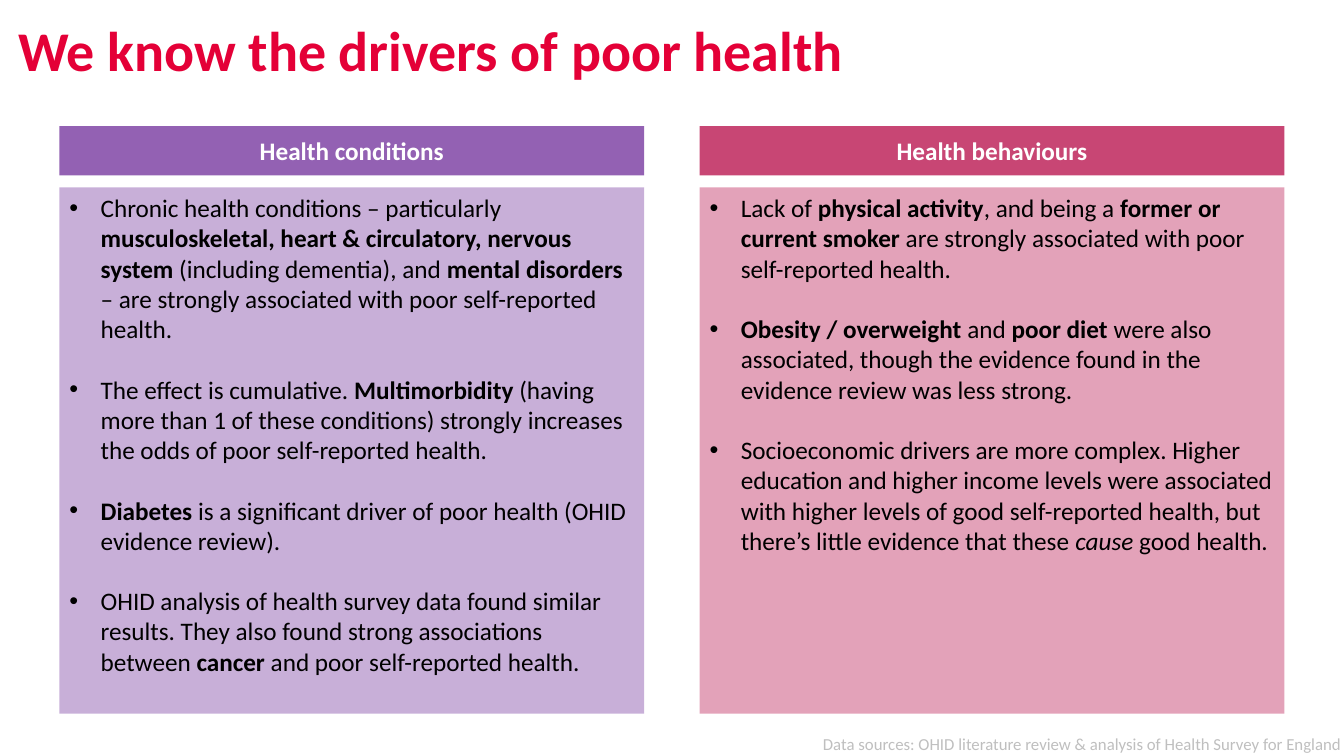
"""Build the slide on the drivers of poor health."""
from dataclasses import dataclass

from lxml import etree
from pptx import Presentation
from pptx import util as u
from pptx.dml.color import RGBColor
from pptx.enum import shapes, text
from pptx.oxml.ns import qn

WIDE, HIGH = u.Inches(13.333), u.Inches(7.5)
LEFT, STEP, SPAN = 4.43, 47.63, 43.5
FONT = "Calibri"


@dataclass
class Panel:
    """A headed column of bullet points; *bold* and _italic_ mark the text."""
    head: str
    hue: str
    points: list[str]


PANELS = [
    Panel("Health conditions", "9361B3", [
        "Chronic health conditions – particularly *musculoskeletal, heart & circulatory, "
        "nervous system *(including dementia), and *mental disorders *– are strongly "
        "associated with poor self-reported health.",
        "The effect is cumulative. *Multimorbidity* (having more than 1 of these "
        "conditions) strongly increases the odds of poor self-reported health.",
        "*Diabetes* is a significant driver of poor health (OHID evidence review).",
        "OHID analysis of health survey data found similar results. They also found "
        "strong associations between *cancer* and poor self-reported health.",
    ]),
    Panel("Health behaviours", "C84674", [
        "Lack of *physical activity*, and being a *former or current smoker* are "
        "strongly associated with poor self-reported health.",
        "*Obesity / overweight *and *poor diet *were also associated, though the "
        "evidence found in the evidence review was less strong.",
        "Socioeconomic drivers are more complex. Higher education and higher income "
        "levels were associated with higher levels of good self-reported health, but "
        "there’s little evidence that these _cause_ good health.",
    ]),
]


def tint(hue: str) -> RGBColor:
    """Turn a hex string into a colour."""
    return RGBColor.from_string(hue)


def area(x: float, y: float, w: float, h: float) -> list[int]:
    """Turn percentages of the slide into left, top, width and height."""
    return [round(p * side / 100) for p, side in zip((x, y, w, h), (WIDE, HIGH) * 2)]


def write(shape, lines: list[str], *, size: float = 18, hue: str = "000000",
          bold: bool = False, align=text.PP_ALIGN.LEFT, anchor=text.MSO_ANCHOR.TOP,
          inset: bool = True, bullet: bool = False, gap: float = 0) -> None:
    """Fill a shape with formatted paragraphs."""
    frame = shape.text_frame
    frame.word_wrap, frame.auto_size = True, text.MSO_AUTO_SIZE.NONE
    frame.vertical_anchor = anchor
    if not inset:
        frame.margin_left = frame.margin_right = frame.margin_top = frame.margin_bottom = 0
    for i, line in enumerate(lines):
        para = frame.add_paragraph() if i else frame.paragraphs[0]
        para.alignment, para.line_spacing = align, 1.0
        para.space_before = u.Pt(gap if i else 0)
        if bullet:
            props = para._p.get_or_add_pPr()
            props.set("marL", str(u.Inches(0.31)))
            props.set("indent", str(-u.Inches(0.31)))
            etree.SubElement(props, qn("a:buFont"), typeface="Arial")
            etree.SubElement(props, qn("a:buChar"), char="•")
        for j, part in enumerate(line.split("*")):
            for k, words in enumerate(part.split("_")):
                if words:
                    run = para.add_run()
                    run.text = words
                    font = run.font
                    font.name, font.size, font.color.rgb = FONT, u.Pt(size), tint(hue)
                    font.bold, font.italic = bold or j % 2 == 1, k % 2 == 1


def block(slide, box: list[int], hue: str, alpha: int = 100):
    """Draw a plain filled rectangle."""
    shape = slide.shapes.add_shape(shapes.MSO_SHAPE.RECTANGLE, *box)
    shape.shadow.inherit = False
    shape.fill.solid()
    shape.fill.fore_color.rgb = tint(hue)
    shape.line.fill.background()
    if alpha < 100:
        color = shape._element.spPr.find(f".//{qn('a:srgbClr')}")
        etree.SubElement(color, qn("a:alpha"), val=str(alpha * 1000))
    return shape


def draw(slide, panel: Panel, col: int) -> None:
    """Draw one panel in its column."""
    x = LEFT + col * STEP
    head = block(slide, area(x, 16.67, SPAN, 6.53), panel.hue)
    write(head, [panel.head], hue="FFFFFF", bold=True,
          align=text.PP_ALIGN.CENTER, anchor=text.MSO_ANCHOR.MIDDLE)
    body = block(slide, area(x, 24.8, SPAN, 69.6), panel.hue, 50)
    write(body, panel.points, bullet=True, gap=21.6)


def main() -> None:
    """Build and save the slide."""
    deck = Presentation()
    deck.slide_width, deck.slide_height = WIDE, HIGH
    slide = deck.slides.add_slide(deck.slide_layouts[5])
    title = slide.shapes.title
    title.left, title.top, title.width, title.height = area(1.35, 2, 97.58, 8.27)
    write(title, ["We know the drivers of poor health"], size=40, hue="E40037",
          bold=True, inset=False)
    for col, panel in enumerate(PANELS):
        draw(slide, panel, col)
    note = slide.shapes.add_textbox(*area(46.65, 97.07, 53.18, 2.93))
    write(note, ["Data sources: OHID literature review & analysis of Health Survey for England"],
          size=12, hue="BFBFBF", align=text.PP_ALIGN.RIGHT, inset=False)
    deck.save("out.pptx")


if __name__ == "__main__":
    main()
